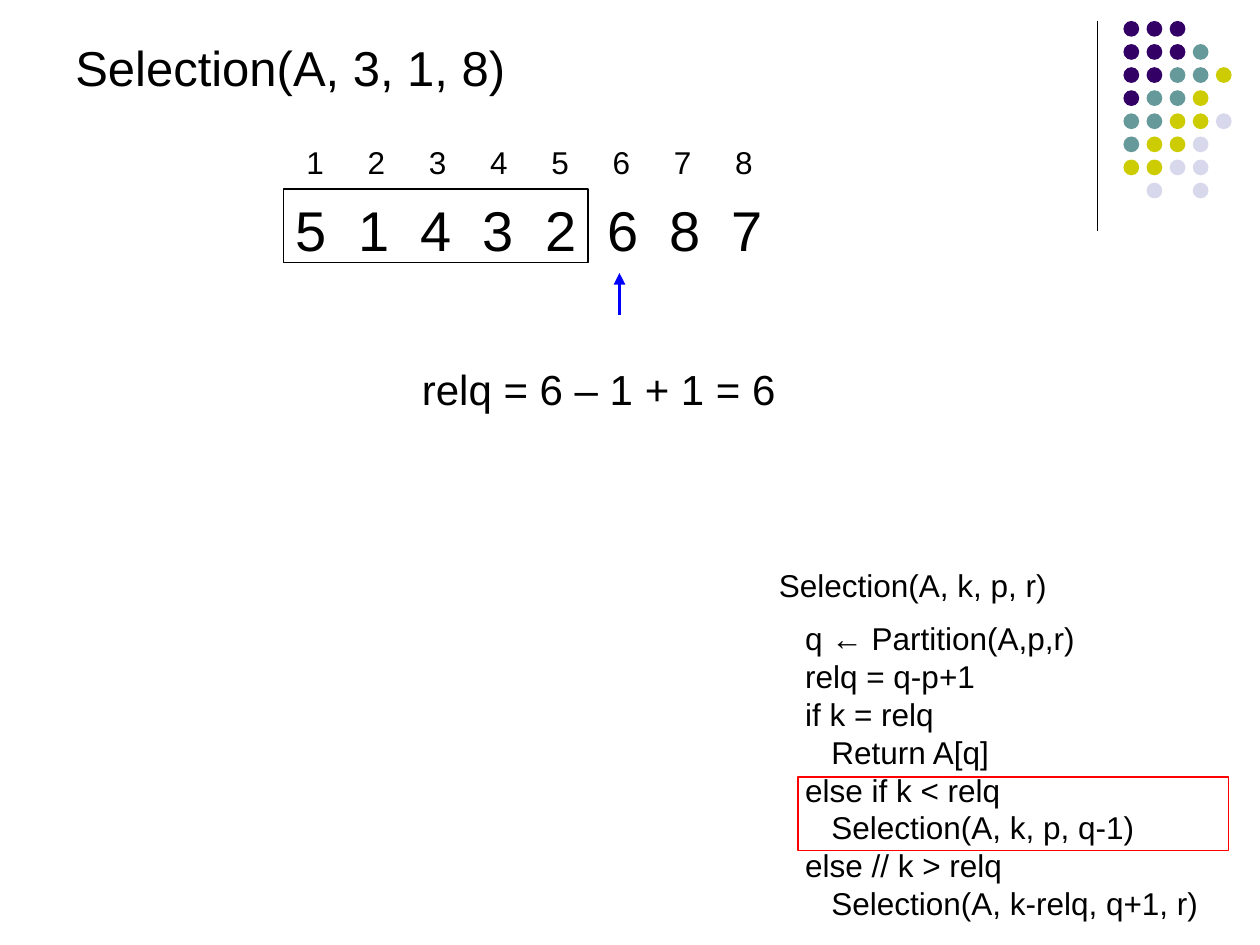
"""Build the Selection(A, 3, 1, 8) slide on a grid of 120 columns by 90 rows."""
from lxml import etree
from pptx import Presentation
from pptx.dml.color import RGBColor
from pptx.enum.shapes import MSO_CONNECTOR, MSO_SHAPE
from pptx.oxml.ns import qn
from pptx.util import Inches, Pt

LINE, OVAL, RECT = MSO_CONNECTOR.STRAIGHT, MSO_SHAPE.OVAL, MSO_SHAPE.RECTANGLE
THEME = {
    "font": "Arial", "ink": "000000", "arrow": "0000FF", "mark": "FF0000",
    "dots": {"P": "330066", "T": "669999", "Y": "CCCC00", "L": "D8D8EC"},
    "title": 28, "array": 32, "index": 18, "note": 24, "code": 18,
}

prs = Presentation()
prs.slide_width, prs.slide_height = Inches(10), Inches(7.5)
s = prs.slides.add_slide(prs.slide_layouts[6])
UNIT = prs.slide_width / 120


def grid(*cells):
    return [round(c * UNIT) for c in cells]


def add_text(box, lines, size, tab=0):
    """Add lines of (text, indent level, format) with tab stops every tab points."""
    tf = s.shapes.add_textbox(*grid(*box)).text_frame
    tf.word_wrap = True
    for i, (text, level, fmt) in enumerate(lines):
        p = tf.paragraphs[0] if i == 0 else tf.add_paragraph()
        for name, value in fmt.items():
            setattr(p, name, value)
        r = p.add_run()
        r.text = text
        for name, value in {"name": THEME["font"], "size": Pt(size)}.items():
            setattr(r.font, name, value)
        r.font.color.rgb = RGBColor.from_string(THEME["ink"])
        pPr = p._p.get_or_add_pPr()
        pPr.set("marL", str(Pt(15 * level)))
        if tab:
            tabs = etree.SubElement(pPr, qn("a:tabLst"))
            for n in range(1, text.count("\t") + 1):
                etree.SubElement(tabs, qn("a:tab"), pos=str(Pt(tab * n)), algn="l")


# fmt: off
DOTS = ["PPP", "PPPT", "PPTTY", "PTTY", "TTYYL", "TYYL", "YYLL", " L L"]
# fmt: on
for row, colors in enumerate(DOTS):
    for col, key in enumerate(colors):
        if key in THEME["dots"]:
            sp = s.shapes.add_shape(OVAL, *grid(107 + 2.2 * col, 2 + 2.2 * row, 1.5, 1.5))
            sp.shadow.inherit = False
            sp.fill.solid()
            sp.fill.fore_color.rgb = RGBColor.from_string(THEME["dots"][key])
            sp.line.fill.background()

CODE = [
    ("Selection(A, k, p, r)", 0), ("q ← Partition(A,p,r)", 1), ("relq = q-p+1", 1),
    ("if k = relq", 1), ("Return A[q]", 2), ("else if k < relq", 1),
    ("Selection(A, k, p, q-1)", 2), ("else // k > relq", 1),
    ("Selection(A, k-relq, q+1, r)", 2),
]
code = [(text, level, {"line_spacing": Pt(21.6), "space_before": Pt(9 if i == 1 else 0)})
        for i, (text, level) in enumerate(CODE)]
add_text((73, 53.3, 45, 35.7), code, THEME["code"])

ROWS = [
    ((6, 3, 77, 6.8), "Selection(A, 3, 1, 8)", "title", 0),
    ((27, 18, 55, 7.6), "\t".join("51432687"), "array", 35.6),
    ((28, 13, 50, 4.8), "\t".join("12345678"), "index", 35),
    ((39, 34, 46, 6.1), "relq = 6 – 1 + 1 = 6", "note", 0),
]
for box, text, role, tab in ROWS:
    add_text(box, [(text, 0, {})], THEME[role], tab)

for box, color in [((76, 74, 41, 7), "mark"), ((27, 18, 29, 7), "ink")]:
    sp = s.shapes.add_shape(RECT, *grid(*box))
    sp.shadow.inherit = False
    sp.fill.background()
    sp.line.color.rgb = RGBColor.from_string(THEME[color])
    sp.line.width = Pt(0.75)

LINES = [((104.5, 2, 104.5, 22), "ink", 0.75, False), ((59, 30, 59, 26), "arrow", 2.25, True)]
for ends, color, width, head in LINES:
    sp = s.shapes.add_connector(LINE, *grid(*ends))
    sp.line.color.rgb = RGBColor.from_string(THEME[color])
    sp.line.width = Pt(width)
    if head:
        etree.SubElement(sp.line._get_or_add_ln(), qn("a:tailEnd"), type="triangle")
    etree.SubElement(sp._element.spPr, qn("a:effectLst"))

prs.save("out.pptx")
